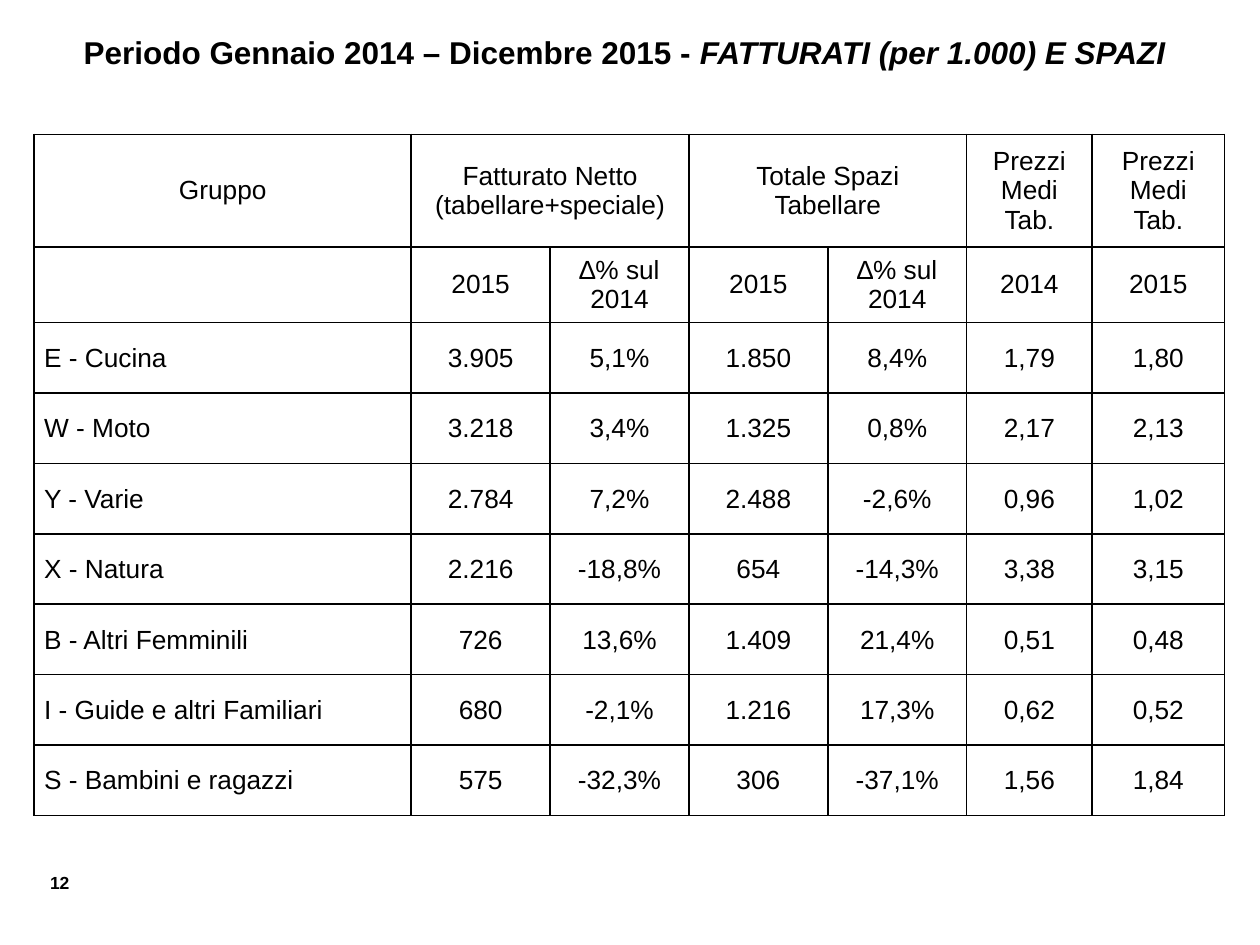
import pptx
import pptx.dml.color
import pptx.enum.text
import pptx.oxml
import pptx.oxml.ns
import pptx.util
import lxml.etree

Cm = pptx.util.Cm
Align = pptx.enum.text.PP_ALIGN
Anchor = pptx.enum.text.MSO_ANCHOR

COLORS = {"text": "000000", "border": "000000"}
FONT = "Arial"

TITLE = [
    ("Periodo Gennaio 2014 – Dicembre 2015 - ", False),
    ("FATTURATI (per 1.000) E SPAZI", True),
]
PAGE_NUMBER = "12"

# None marks a cell joined to the one on its left.
HEADER_ROWS = [
    ["Gruppo", "Fatturato Netto (tabellare+speciale)", None,
     "Totale Spazi Tabellare", None, "Prezzi Medi Tab.", "Prezzi Medi Tab."],
    ["", "2015", "∆% sul 2014", "2015", "∆% sul 2014", "2014", "2015"],
]
GROUP_ROWS = [
    ["E - Cucina", "3.905", "5,1%", "1.850", "8,4%", "1,79", "1,80"],
    ["W - Moto", "3.218", "3,4%", "1.325", "0,8%", "2,17", "2,13"],
    ["Y - Varie", "2.784", "7,2%", "2.488", "-2,6%", "0,96", "1,02"],
    ["X - Natura", "2.216", "-18,8%", "654", "-14,3%", "3,38", "3,15"],
    ["B - Altri Femminili", "726", "13,6%", "1.409", "21,4%", "0,51", "0,48"],
    ["I - Guide e altri Familiari", "680", "-2,1%", "1.216", "17,3%", "0,62", "0,52"],
    ["S - Bambini e ragazzi", "575", "-32,3%", "306", "-37,1%", "1,56", "1,84"],
]
COLUMN_WIDTHS = [7.6, 2.8, 2.8, 2.8, 2.8, 2.53, 2.67]
ROW_HEIGHTS = [2.27, 1.52] + [1.42] * len(GROUP_ROWS)

# Cell insets in cm: left, top, right, bottom
HEADER_INSETS = (0.25, 0.13, 0.25, 0.13)
NAME_INSETS = (0.2, 0.02, 0.2, 0)
VALUE_INSETS = (0.02, 0.02, 0.02, 0)


def add_text(paragraph, text, size=15, bold=False, italic=False, align=Align.CENTER):
    paragraph.alignment = align
    paragraph.font.size = pptx.util.Pt(size)
    if not text:
        return
    run = paragraph.add_run()
    run.text = text
    run.font.name = FONT
    run.font.size = pptx.util.Pt(size)
    run.font.bold = bold
    run.font.italic = italic
    run.font.color.rgb = pptx.dml.color.RGBColor.from_string(COLORS["text"])


def add_borders(cell, width=1):
    """Draw all four edges; they must come before the fill in the cell properties."""
    properties = cell._tc.get_or_add_tcPr()
    for index, edge in enumerate(("lnL", "lnR", "lnT", "lnB")):
        line = pptx.oxml.parse_xml(
            f'<a:{edge} {pptx.oxml.ns.nsdecls("a")} w="{pptx.util.Pt(width)}">'
            f'<a:solidFill><a:srgbClr val="{COLORS["border"]}"/></a:solidFill></a:{edge}>'
        )
        properties.insert(index, line)


def format_cell(cell, insets):
    cell.margin_left, cell.margin_top, cell.margin_right, cell.margin_bottom = map(Cm, insets)
    cell.vertical_anchor = Anchor.MIDDLE
    cell.fill.background()
    add_borders(cell)


def add_title(slide):
    title = slide.shapes.title
    title.left, title.top, title.width, title.height = map(Cm, (0.69, 0.53, 23.8, 1.8))
    title.text_frame.vertical_anchor = Anchor.TOP
    title.text_frame.word_wrap = True
    for text, italic in TITLE:
        add_text(title.text_frame.paragraphs[0], text, size=18, bold=True, italic=italic)


def add_groups_table(slide):
    rows = HEADER_ROWS + GROUP_ROWS
    table = slide.shapes.add_table(
        len(rows), len(COLUMN_WIDTHS), Cm(0.69), Cm(2.71),
        Cm(sum(COLUMN_WIDTHS)), Cm(sum(ROW_HEIGHTS)),
    ).table
    table.first_row = table.horz_banding = False
    for column, width in zip(table.columns, COLUMN_WIDTHS):
        column.width = Cm(width)
    for row, height in zip(table.rows, ROW_HEIGHTS):
        row.height = Cm(height)

    for row_index, row in enumerate(rows):
        is_header = row_index < len(HEADER_ROWS)
        for column_index, text in enumerate(row):
            cell = table.cell(row_index, column_index)
            is_name = column_index == 0 and not is_header
            insets = HEADER_INSETS if is_header else NAME_INSETS if is_name else VALUE_INSETS
            format_cell(cell, insets)
            if text is None:
                table.cell(row_index, column_index - 1).merge(cell)
            else:
                add_text(cell.text_frame.paragraphs[0], text,
                         align=Align.LEFT if is_name else Align.CENTER)


def add_page_number(slide):
    box = slide.shapes.add_textbox(Cm(0.48), Cm(17.45), Cm(1.17), Cm(0.69))
    box.text_frame.word_wrap = True
    add_text(box.text_frame.paragraphs[0], PAGE_NUMBER, size=10, bold=True, align=Align.RIGHT)


def main():
    presentation = pptx.Presentation()
    presentation.slide_width = Cm(25.4)
    presentation.slide_height = Cm(19.05)
    slide = presentation.slides.add_slide(presentation.slide_layouts[5])
    add_title(slide)
    add_groups_table(slide)
    add_page_number(slide)
    presentation.save("out.pptx")


if __name__ == "__main__":
    main()
